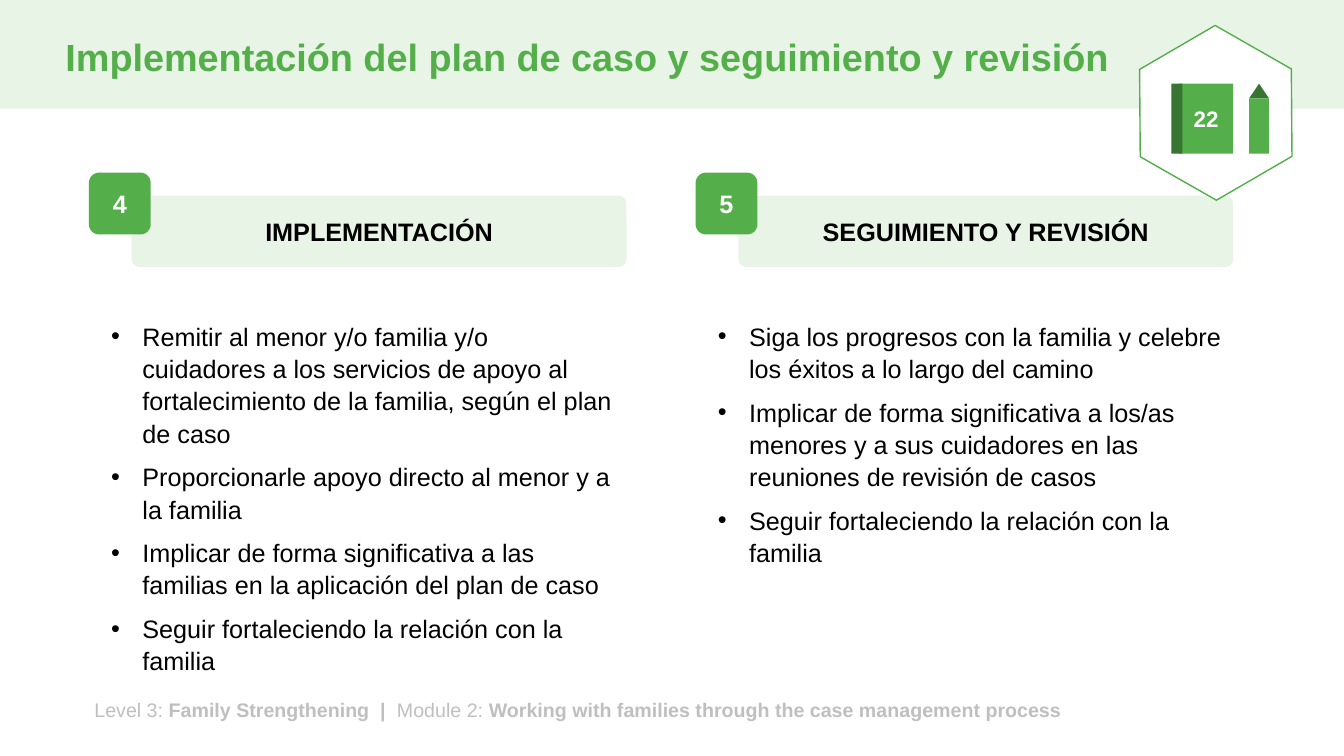
from lxml.etree import SubElement
from pptx import Presentation
from pptx.dml.color import RGBColor
from pptx.enum.shapes import MSO_SHAPE
from pptx.enum.text import MSO_ANCHOR, PP_ALIGN
from pptx.oxml.ns import qn
from pptx.util import Cm, Pt

GREEN = RGBColor(0x54, 0xAF, 0x4B)
DARK_GREEN = RGBColor(0x38, 0x75, 0x32)
PALE_GREEN = RGBColor(0xE8, 0xF4, 0xE6)
GREY = RGBColor(0xBF, 0xBF, 0xBF)
BLACK = RGBColor(0, 0, 0)
WHITE = RGBColor(0xFF, 0xFF, 0xFF)

COLUMNS = [
    ("4", "IMPLEMENTACIÓN", [
        "Remitir al menor y/o familia y/o cuidadores a los servicios de apoyo al "
        "fortalecimiento de la familia, según el plan de caso",
        "Proporcionarle apoyo directo al menor y a la familia",
        "Implicar de forma significativa a las familias en la aplicación del plan de caso",
        "Seguir fortaleciendo la relación con la familia",
    ]),
    ("5", "SEGUIMIENTO Y REVISIÓN", [
        "Siga los progresos con la familia y celebre los éxitos a lo largo del camino",
        "Implicar de forma significativa a los/as menores y a sus cuidadores en las "
        "reuniones de revisión de casos",
        "Seguir fortaleciendo la relación con la familia",
    ]),
]
FOOTER = [
    ("Level 3: ", False),
    ("Family Strengthening  |  ", True),
    ("Module 2: ", False),
    ("Working with families through the case management process", True),
]


def add_run(p, text, size, color, bold=False):
    r = p.add_run()
    r.text = text
    r.font.color.rgb = color
    for name, value in {"name": "Arial", "size": Pt(size), "bold": bold}.items():
        setattr(r.font, name, value)


def add_text_box(s, x, y, w, h):
    tf = s.shapes.add_textbox(Cm(x), Cm(y), Cm(w), Cm(h)).text_frame
    tf.word_wrap = True
    return tf


def add_filled(parent, kind, x, y, w, h, fill, line=None):
    sp = parent.shapes.add_shape(kind, Cm(x), Cm(y), Cm(w), Cm(h))
    sp.shadow.inherit = False
    sp.fill.solid()
    sp.fill.fore_color.rgb = fill
    if line is None:
        sp.line.fill.background()
    else:
        sp.line.color.rgb = line
        sp.line.width = Pt(1)
    return sp


def add_label(sp, text, size, color, wrap=True):
    """Write bold text in the middle of a shape."""
    tf = sp.text_frame
    tf.word_wrap = wrap
    tf.vertical_anchor = MSO_ANCHOR.MIDDLE
    p = tf.paragraphs[0]
    p.alignment = PP_ALIGN.CENTER
    add_run(p, text, size, color, bold=True)


def add_bullet(p):
    pPr = p._p.get_or_add_pPr()
    indent = Cm(0.79)
    pPr.set("marL", str(indent))
    pPr.set("indent", str(-indent))
    SubElement(pPr, qn("a:buFont"), typeface="Arial")
    SubElement(pPr, qn("a:buChar"), char="•")


def add_header(s, x, y, w, h):
    add_filled(s, MSO_SHAPE.RECTANGLE, x, y, w, h, PALE_GREEN)
    tf = add_text_box(s, x + 1.4, y + 0.28, 29.2, h - 0.33)
    tf.vertical_anchor = MSO_ANCHOR.MIDDLE
    p = tf.paragraphs[0]
    p.line_spacing = 0.9
    add_run(p, "Implementación del plan de caso y seguimiento y revisión", 27, GREEN, bold=True)


def add_column(s, x, y, w, h, number, heading, items):
    band_x = 1.08
    band = add_filled(s, MSO_SHAPE.ROUNDED_RECTANGLE,
                      x + band_x, y + 0.58, w - band_x, 1.8, PALE_GREEN)
    band.adjustments[0] = 0.108
    add_label(band, heading, 18, BLACK)
    badge = add_filled(s, MSO_SHAPE.ROUNDED_RECTANGLE, x, y, 1.56, 1.56, GREEN)
    add_label(badge, number, 18, WHITE)

    list_x, list_y = 0.31, 3.56
    tf = add_text_box(s, x + list_x, y + list_y, w - list_x, h - list_y)
    for i, item in enumerate(items):
        p = tf.add_paragraph() if i else tf.paragraphs[0]
        p.line_spacing = 1.07
        p.space_after = Pt(8)
        add_bullet(p)
        add_run(p, item, 18, BLACK)


def add_handbook_icon(s, x, y, w, h):
    """Hexagon around a numbered book and a pencil."""
    icon = s.shapes.add_group_shape()
    hexagon = add_filled(icon, MSO_SHAPE.HEXAGON, x, y, w, h, WHITE, line=GREEN)
    hexagon.adjustments[0] = 0.29
    hexagon.rotation = 29.7

    top, tall, tip = y + 1.17, 1.76, 0.37
    book = add_filled(icon, MSO_SHAPE.RECTANGLE, x + 1.28, top, 1.37, tall, GREEN)
    add_label(book, "22", 16, WHITE, wrap=False)
    add_filled(icon, MSO_SHAPE.RECTANGLE, x + 1.09, top, 0.28, tall, DARK_GREEN)
    pencil_x, pencil_w = x + 3.05, 0.5
    add_filled(icon, MSO_SHAPE.ISOSCELES_TRIANGLE, pencil_x, top, pencil_w, tip, DARK_GREEN)
    add_filled(icon, MSO_SHAPE.RECTANGLE, pencil_x, top + tip, pencil_w, tall - tip, GREEN)


def add_footer(s, x, y, w, h):
    p = add_text_box(s, x, y, w, h).paragraphs[0]
    for text, bold in FOOTER:
        add_run(p, text, 14, GREY, bold)


def main():
    prs = Presentation()
    prs.slide_width, prs.slide_height = Cm(33.87), Cm(19.05)
    s = prs.slides.add_slide(prs.slide_layouts[6])
    add_header(s, 0, 0, 33.87, 2.74)
    add_footer(s, 2.13, 17.45, 26.97, 0.86)
    for i, (number, heading, items) in enumerate(COLUMNS):
        add_column(s, 2.24 + i * 15.29, 4.35, 13.55, 12.86, number, heading, items)
    add_handbook_icon(s, 28.43, 0.94, 4.42, 3.81)
    prs.save("out.pptx")


if __name__ == "__main__":
    main()
